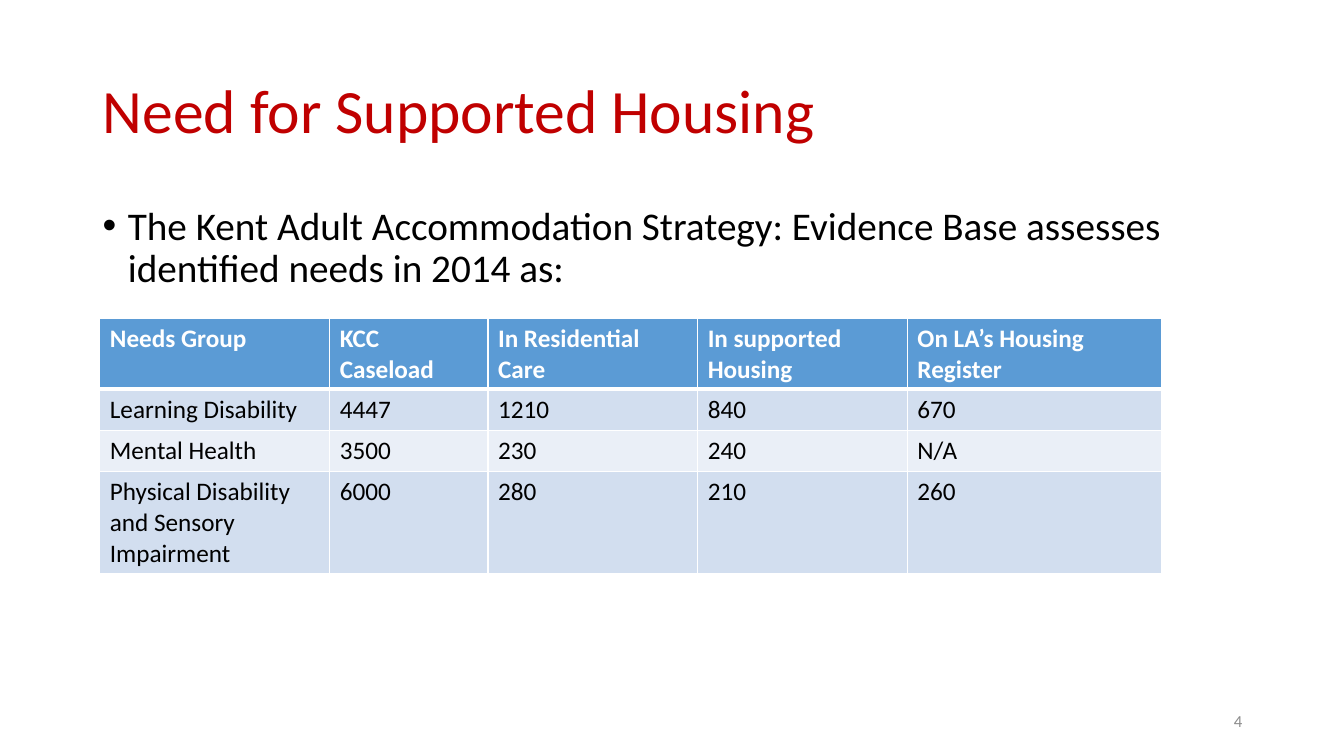
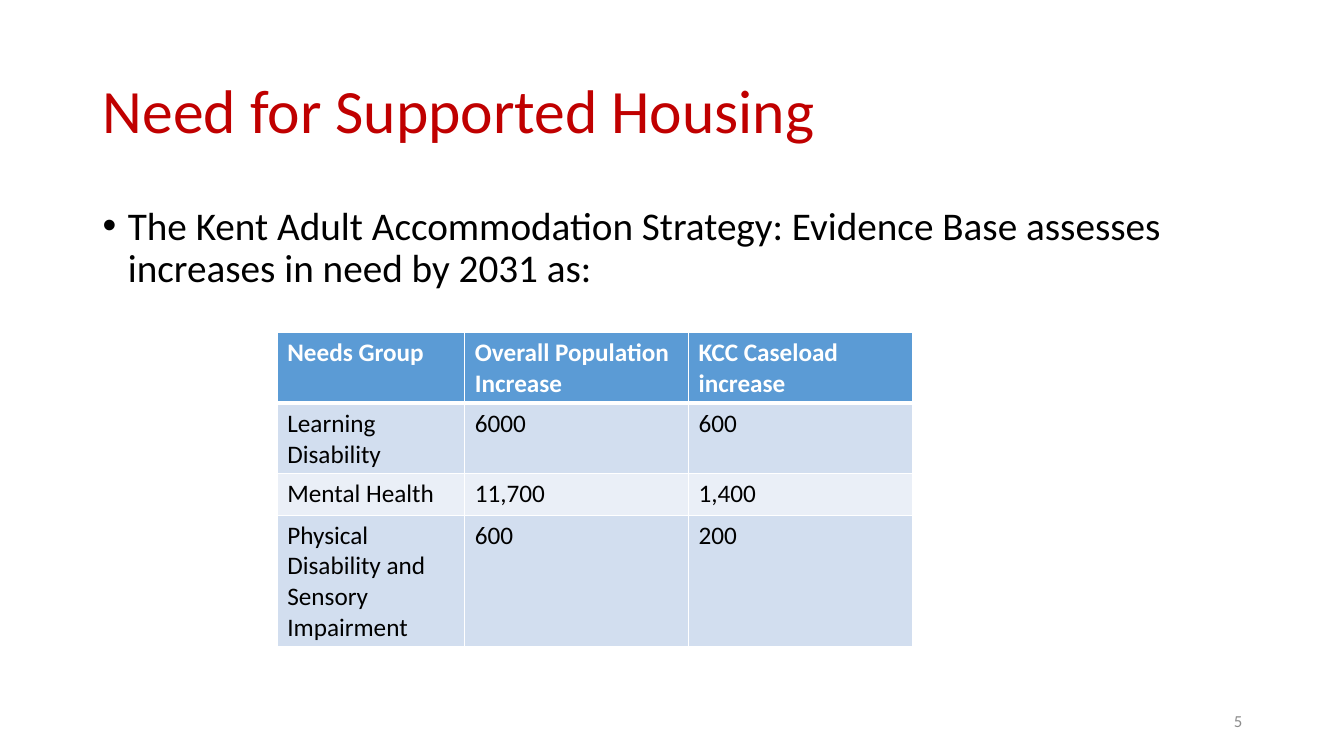
import pptx
import pptx.util
import pptx.dml.color
import pptx.enum.text
import pptx.oxml
import pptx.oxml.ns

Inches = pptx.util.Inches
Pt = pptx.util.Pt
RGB = pptx.dml.color.RGBColor
ALIGN = pptx.enum.text.PP_ALIGN
ANCHOR = pptx.enum.text.MSO_ANCHOR

RED = RGB(0xC0, 0x00, 0x00)
BLACK = RGB(0x00, 0x00, 0x00)
WHITE = RGB(0xFF, 0xFF, 0xFF)
GREY = RGB(0x8C, 0x8C, 0x8C)
BLUE = RGB(0x5B, 0x9B, 0xD5)
BANDS = RGB(0xD2, 0xDE, 0xEF), RGB(0xEA, 0xEF, 0xF7)
FONT = "Calibri"
NS = pptx.oxml.ns.nsdecls("a")


def write(frame, text, size=18, color=BLACK, bold=False, align=ALIGN.LEFT,
          anchor=ANCHOR.TOP, space=1.0, bullet=False):
    frame.word_wrap = True
    frame.vertical_anchor = anchor
    para = frame.paragraphs[0]
    para.text = text
    para.alignment = align
    para.line_spacing = space
    if bullet:
        props = para._p.get_or_add_pPr()
        props.set("marL", str(Inches(0.25)))
        props.set("indent", str(-Inches(0.25)))
        for mark in ('buFont {} typeface="Arial"', 'buChar {} char="•"'):
            props.append(pptx.oxml.parse_xml(f"<a:{mark.format(NS)}/>"))
    font = para.runs[0].font
    font.name, font.size, font.bold = FONT, Pt(size), bold
    font.color.rgb = color


def edge(cell, side, width):
    """Draw one white cell border; side is L, R, T or B."""
    cell._tc.get_or_add_tcPr().append(pptx.oxml.parse_xml(
        f'<a:ln{side} {NS} w="{Pt(width)}"><a:solidFill>'
        f'<a:srgbClr val="{WHITE}"/></a:solidFill></a:ln{side}>'))


class Deck:
    def __init__(self):
        self.show = pptx.Presentation()
        self.show.slide_width = Inches(13.33)
        self.show.slide_height = Inches(7.5)
        self.slide = None

    def start(self, title, number):
        self.slide = self.show.slides.add_slide(self.show.slide_layouts[5])
        head = self.slide.shapes.title
        head.left, head.top = Inches(0.92), Inches(0.4)
        head.width, head.height = Inches(11.5), Inches(1.45)
        write(head.text_frame, title, size=44, color=RED,
              anchor=ANCHOR.MIDDLE, space=0.9)
        self.text(number, 9.42, 6.95, 3, 0.4, size=12, color=GREY,
                  align=ALIGN.RIGHT, anchor=ANCHOR.MIDDLE)

    def text(self, words, left, top, width, height, **style):
        box = self.slide.shapes.add_textbox(
            Inches(left), Inches(top), Inches(width), Inches(height))
        write(box.text_frame, words, **style)

    def point(self, words):
        self.text(words, 0.92, 2, 11.5, 1, size=28, space=0.9, bullet=True)

    def table(self, left, top, widths, heights, rows):
        grid = self.slide.shapes.add_table(
            len(rows), len(widths), Inches(left), Inches(top),
            Inches(sum(widths)), Inches(sum(heights))).table
        for col, width in zip(grid.columns, widths):
            col.width = Inches(width)
        for r, (row, height) in enumerate(zip(rows, heights)):
            grid.rows[r].height = Inches(height)
            for c, words in enumerate(row):
                self.cell(grid.cell(r, c), words, r)

    def cell(self, cell, words, row):
        head = row == 0
        for side in "LRTB":
            thick = (row, side) in ((0, "B"), (1, "T"))
            edge(cell, side, 3 if thick else 1)
        cell.fill.solid()
        cell.fill.fore_color.rgb = BLUE if head else BANDS[(row - 1) % 2]
        write(cell.text_frame, words, color=WHITE if head else BLACK, bold=head)


def main():
    deck = Deck()
    title = "Need for Supported Housing"
    lead = "The Kent Adult Accommodation Strategy: Evidence Base assesses "
    groups = ("Learning Disability", "Mental Health",
              "Physical Disability and Sensory Impairment")

    deck.start(title, "4")
    deck.point(lead + "identified needs in 2014 as:")
    deck.table(0.99, 3.16, (2.28, 1.57, 2.08, 2.08, 2.52),
               (0.7, 0.41, 0.41, 1.01), [
        ("Needs Group", "KCC Caseload", "In Residential Care",
         "In supported Housing", "On LA’s Housing Register"),
        (groups[0], "4447", "1210", "840", "670"),
        (groups[1], "3500", "230", "240", "N/A"),
        (groups[2], "6000", "280", "210", "260"),
    ])

    deck.start(title, "5")
    deck.point(lead + "increases in need by 2031 as:")
    deck.table(2.75, 3.3, (1.86, 2.22, 2.22), (0.7, 0.7, 0.41, 1.3), [
        ("Needs Group", "Overall Population Increase",
         "KCC Caseload increase"),
        (groups[0], "6000", "600"),
        (groups[1], "11,700", "1,400"),
        (groups[2], "600", "200"),
    ])
    deck.show.save("out.pptx")


if __name__ == "__main__":
    main()
